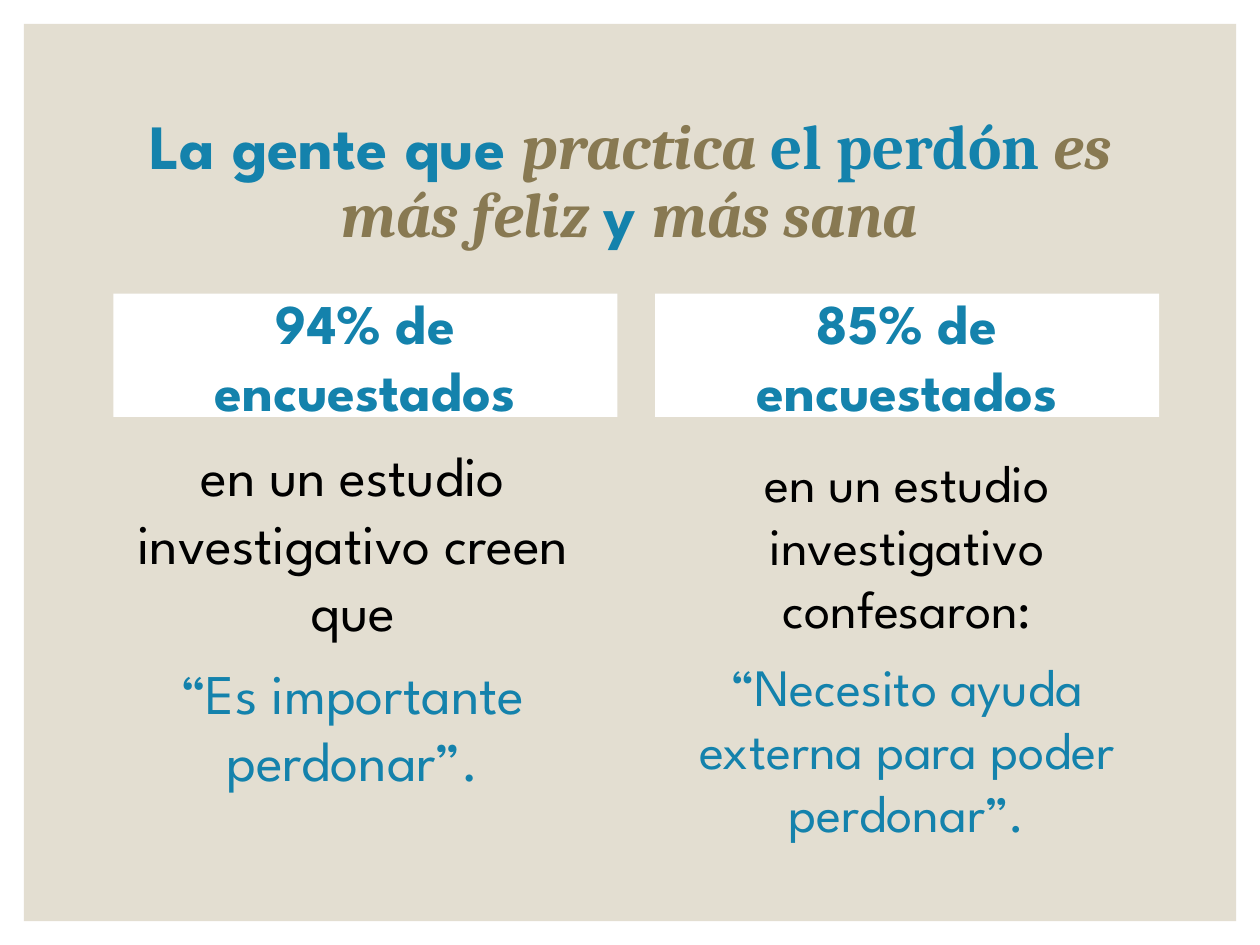
from pptx import Presentation
from pptx.dml.color import RGBColor
from pptx.enum.shapes import MSO_SHAPE as Shape
from pptx.enum.text import MSO_ANCHOR as Anchor, PP_ALIGN as Align
from pptx.util import Inches, Pt

COLORS = {"paper": "FFFFFF", "sand": "E3DED1", "blue": "1482AC",
          "olive": "887952", "ink": "000000"}
SANS, SERIF = "League Spartan", "Cambria"
WIDTH, HEIGHT = 10, 7.5


class SlideBuilder:
    def __init__(self, deck):
        self.page = deck.slides.add_slide(deck.slide_layouts[5])

    def place(self, left, top, width, height):
        return [Inches(round(share * size, 2)) for share, size in
                zip((left, top, width, height), (WIDTH, HEIGHT) * 2)]

    def add_span(self, para, text, color, **formats):
        span = para.add_run()
        span.text = text
        span.font.color.rgb = RGBColor.from_string(COLORS[color])
        for name, value in formats.items():
            setattr(span.font, name, value)

    def frame(self, box, anchor):
        box.text_frame.word_wrap = True
        box.text_frame.vertical_anchor = anchor
        para = box.text_frame.paragraphs[0]
        para.alignment = Align.CENTER
        return para

    def title(self, area, spans):
        box = self.page.shapes.title
        box.left, box.top, box.width, box.height = self.place(*area)
        para = self.frame(box, Anchor.MIDDLE)
        para.line_spacing = 0.9
        for text, color, font, italic in spans:
            self.add_span(para, text, color, name=font, italic=italic,
                          size=Pt(36), bold=True)

    def panel(self, area, color):
        box = self.page.shapes.add_shape(Shape.RECTANGLE, *self.place(*area))
        box.shadow.inherit = False
        box.fill.solid()
        box.fill.fore_color.rgb = RGBColor.from_string(COLORS[color])
        box.line.fill.background()
        return box

    def heading(self, area, text):
        para = self.frame(self.panel(area, "paper"), Anchor.MIDDLE)
        self.add_span(para, text, "blue", name=SANS, size=Pt(32), bold=True)

    def finding(self, area, size, lines):
        box = self.page.shapes.add_textbox(*self.place(*area))
        para = self.frame(box, Anchor.TOP)
        for index, (text, color) in enumerate(lines):
            if index:
                para = box.text_frame.add_paragraph()
            para.alignment = Align.CENTER
            para.space_before = Pt(9)
            self.add_span(para, text, color, name=SANS, size=Pt(size))


def main():
    deck = Presentation()
    deck.slide_width, deck.slide_height = Inches(WIDTH), Inches(HEIGHT)
    slide = SlideBuilder(deck)
    panel = slide.panel((0.019, 0.025, 0.962, 0.95), "sand")
    slide.page.shapes.title.element.addprevious(panel.element)

    slide.title((0.08, 0.7 / HEIGHT, 0.84, 0.2), [
        ("La gente que ", "blue", SANS, False),
        ("practica", "olive", SERIF, True),
        (" el perdón ", "blue", SERIF, False),
        ("es más feliz ", "olive", SERIF, True),
        ("y ", "blue", SANS, False),
        ("más sana", "olive", SERIF, True),
    ])

    columns = [
        (0.09, "94% de encuestados", 0.08, 0.46, 32,
         "en un estudio investigativo creen que",
         "“Es importante perdonar”."),
        (0.52, "85% de encuestados", 0.52, 0.47, 30,
         "en un estudio investigativo confesaron:",
         "“Necesito ayuda externa para poder perdonar”."),
    ]
    for head_left, head, left, top, size, intro, quote in columns:
        slide.heading((head_left, 0.311, 0.4, 0.13), head)
        slide.finding((left, top, 0.4, 3.5 / HEIGHT), size,
                      [(intro, "ink"), (quote, "blue")])

    deck.save("out.pptx")


if __name__ == "__main__":
    main()
